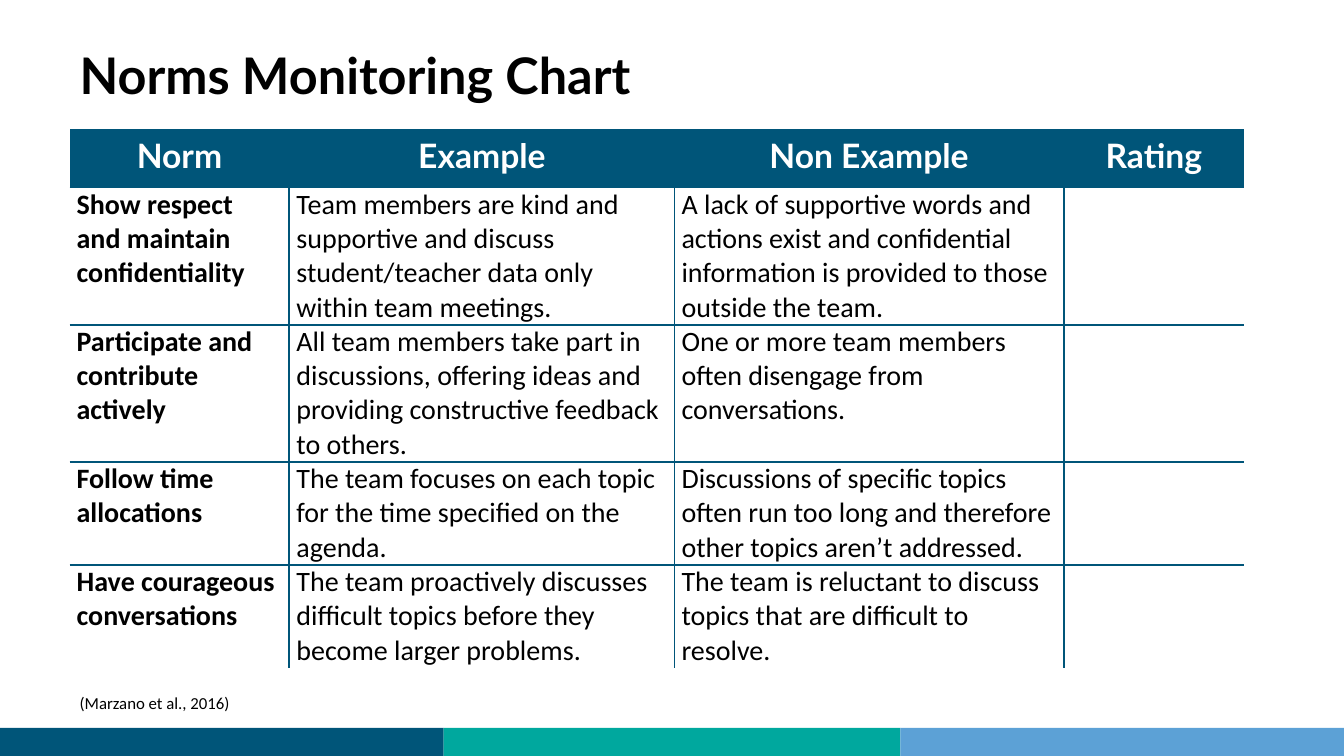
import pptx
import pptx.dml.color
import pptx.enum.shapes
import pptx.enum.text
import pptx.oxml
import pptx.oxml.ns
import pptx.util

Inches = pptx.util.Inches
Pt = pptx.util.Pt
Align = pptx.enum.text.PP_ALIGN
Anchor = pptx.enum.text.MSO_ANCHOR

NAVY, TEAL, SKY = "005579", "00A89E", "5CA1D6"
BLACK, WHITE = "000000", "FFFFFF"

HEADINGS = ["Norm", "Example", "Non Example", "Rating"]
NORMS = [
    ["Show respect and maintain confidentiality",
     "Team members are kind and supportive and discuss student/teacher data only within team meetings.",
     "A lack of supportive words and actions exist and confidential information is provided to those outside the team.",
     ""],
    ["Participate and contribute actively",
     "All team members take part in discussions, offering ideas and providing constructive feedback to others.",
     "One or more team members often disengage from conversations.",
     ""],
    ["Follow time allocations",
     "The team focuses on each topic for the time specified on the agenda.",
     "Discussions of specific topics often run too long and therefore other topics aren’t addressed.",
     ""],
    ["Have courageous conversations",
     "The team proactively discusses difficult topics before they become larger problems.",
     "The team is reluctant to discuss topics that are difficult to resolve.",
     ""],
]


def colour(value):
    return pptx.dml.color.RGBColor.from_string(value)


def write(frame, text, font="Calibri", size=20, hue=BLACK, bold=False,
          align=Align.LEFT, spacing=1.0, anchor=Anchor.TOP):
    frame.word_wrap = True
    frame.vertical_anchor = anchor
    paragraph = frame.paragraphs[0]
    paragraph.alignment = align
    paragraph.line_spacing = spacing
    if text:
        run = paragraph.add_run()
        run.text = text
        run.font.name = font
        run.font.size = Pt(size)
        run.font.bold = bold
        run.font.color.rgb = colour(hue)


def inset(frame, across, down):
    frame.margin_left = frame.margin_right = Inches(across)
    frame.margin_top = frame.margin_bottom = Inches(down)


class NormsSlide:
    def __init__(self, deck):
        self.slide = deck.slides.add_slide(deck.slide_layouts[5])
        self.shapes = self.slide.shapes

    def title(self, text, left, top, width, height):
        heading = self.shapes.title
        heading.left, heading.top = Inches(left), Inches(top)
        heading.width, heading.height = Inches(width), Inches(height)
        frame = heading.text_frame
        frame.auto_size = pptx.enum.text.MSO_AUTO_SIZE.NONE
        inset(frame, 0.1, 0.05)
        write(frame, text, font="Lato", size=36, bold=True, spacing=0.9,
              anchor=Anchor.MIDDLE)

    def band(self, left, top, width, height, hue):
        stripe = self.shapes.add_shape(
            pptx.enum.shapes.MSO_SHAPE.RECTANGLE,
            Inches(left), Inches(top), Inches(width), Inches(height))
        stripe.shadow.inherit = False
        stripe.fill.solid()
        stripe.fill.fore_color.rgb = colour(hue)
        stripe.line.fill.background()

    def caption(self, text, left, top, width, height):
        citation = self.shapes.add_textbox(
            Inches(left), Inches(top), Inches(width), Inches(height))
        inset(citation.text_frame, 0.13, 0.07)
        write(citation.text_frame, text, size=12)

    def border(self, cell, edge, visible):
        paint = (f'<a:solidFill><a:srgbClr val="{NAVY}"/></a:solidFill>'
                 if visible else "<a:noFill/>")
        cell._tc.get_or_add_tcPr().append(pptx.oxml.parse_xml(
            f'<a:ln{edge} {pptx.oxml.ns.nsdecls("a")} w="{Pt(1.5)}">'
            f"{paint}</a:ln{edge}>"))

    def chart(self, rows, left, top, widths, heights):
        grid = self.shapes.add_table(
            len(heights), len(widths), Inches(left), Inches(top),
            Inches(sum(widths)), Inches(sum(heights))).table
        grid.horz_banding = False
        for column, width in zip(grid.columns, widths):
            column.width = Inches(width)
        for row, height in zip(grid.rows, heights):
            row.height = Inches(height)
        last_row, last_column = len(heights) - 1, len(widths) - 1
        for r, texts in enumerate(rows):
            for c, text in enumerate(texts):
                cell = grid.cell(r, c)
                inset(cell, 0.07, 0)
                self.border(cell, "L", c > 0)
                self.border(cell, "R", c < last_column)
                self.border(cell, "T", r > 0)
                self.border(cell, "B", r < last_row)
                if r == 0:
                    cell.fill.solid()
                    cell.fill.fore_color.rgb = colour(NAVY)
                    write(cell.text_frame, text, font="Lato", size=24, hue=WHITE,
                          bold=True, align=Align.CENTER, spacing=1.15)
                else:
                    cell.fill.background()
                    write(cell.text_frame, text, bold=c == 0)


def main():
    deck = pptx.Presentation()
    deck.slide_width, deck.slide_height = Inches(13.33), Inches(7.5)
    norms = NormsSlide(deck)
    left = 0
    for width, hue in [(4.4, NAVY), (4.53, TEAL), (4.4, SKY)]:
        norms.band(left, 7.22, width, 0.28, hue)
        left += width
    norms.title("Norms Monitoring Chart", 0.69, 0.3, 11.96, 0.95)
    norms.chart([HEADINGS] + NORMS, 0.69, 1.28,
                [2.18, 3.82, 3.86, 1.79], [0.58, 1.26, 1.27, 0.93, 0.99])
    norms.caption("(Marzano et al., 2016)", 0.66, 6.8, 11.76, 0.34)
    deck.save("out.pptx")


if __name__ == "__main__":
    main()
